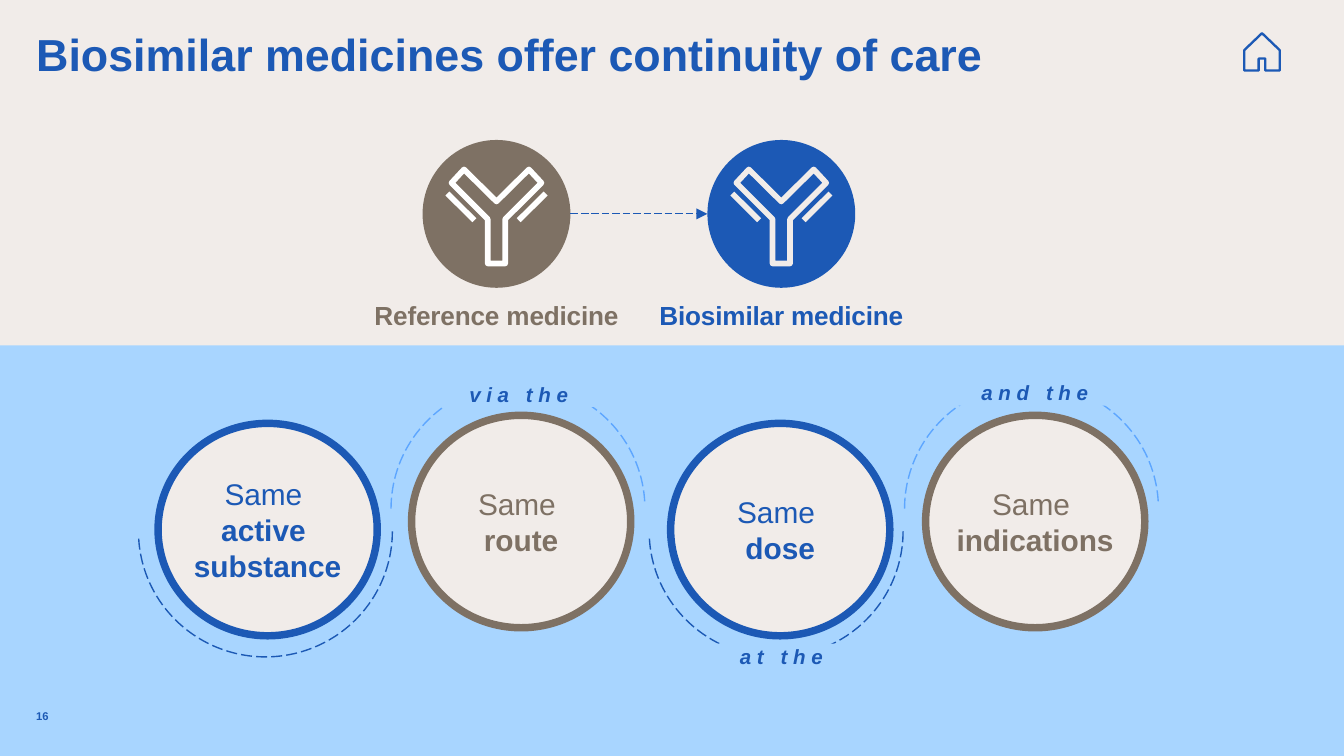
from pptx import Presentation
from pptx.dml.color import RGBColor
from pptx.enum.dml import MSO_LINE
from pptx.enum.shapes import MSO_CONNECTOR, MSO_SHAPE
from pptx.enum.text import MSO_ANCHOR, PP_ALIGN
from pptx.oxml.ns import qn
from pptx.util import Pt
from lxml.etree import SubElement

BLUE = RGBColor(0x1C, 0x59, 0xB5)
BROWN = RGBColor(0x7E, 0x71, 0x64)
SKY = RGBColor(0xA8, 0xD5, 0xFF)
LIGHT = RGBColor(0x5D, 0xA6, 0xFF)
CREAM = RGBColor(0xF1, 0xEC, 0xE9)
WHITE = RGBColor(0xFF, 0xFF, 0xFF)


def style(shape, fill=None, line=None, width=1):
    shape.shadow.inherit = False
    if fill is None:
        shape.fill.background()
    else:
        shape.fill.solid()
        shape.fill.fore_color.rgb = fill
    if line is None:
        shape.line.fill.background()
    else:
        shape.line.color.rgb = line
        shape.line.width = Pt(width)
    return shape


def add_form(slide, kind, box, fill=None, line=None, width=1):
    shape = slide.shapes.add_shape(kind, *map(Pt, box))
    return style(shape, fill, line, width)


def add_run(para, text, size, color, bold=True, italic=False, space=0):
    run = para.add_run()
    run.text = text
    font = run.font
    font.name, font.size = "Arial", Pt(size)
    font.bold, font.italic = bold, italic
    font.color.rgb = color
    if space:
        run._r.get_or_add_rPr().set("spc", str(space))


def set_frame(shape, align, anchor=MSO_ANCHOR.TOP, wrap=True, side=0):
    frame = shape.text_frame
    frame.word_wrap = wrap
    frame.vertical_anchor = anchor
    frame.margin_left = frame.margin_right = Pt(side)
    frame.margin_top = frame.margin_bottom = 0
    para = frame.paragraphs[0]
    para.alignment = align
    return para


def add_text(slide, box, text, size, color, align=PP_ALIGN.LEFT, space=0):
    shape = slide.shapes.add_textbox(*map(Pt, box))
    add_run(set_frame(shape, align), text, size, color, space=space)


def add_title(slide, text):
    title = slide.shapes.title
    title.left, title.top, title.width, title.height = map(Pt, (19.4, 14.4, 626.4, 89.3))
    add_run(set_frame(title, PP_ALIGN.LEFT), text, 24, BLUE)


def add_line(slide, start, end, color, width):
    line = slide.shapes.add_connector(MSO_CONNECTOR.STRAIGHT, *map(Pt, start + end))
    line.line.color.rgb = color
    line.line.width = Pt(width)
    SubElement(line._element.spPr, qn("a:effectLst"))
    return line


def add_arrow(slide, start, end):
    arrow = add_line(slide, start, end, BLUE, 0.5)
    arrow.line.dash_style = MSO_LINE.LONG_DASH
    SubElement(arrow.line._get_or_add_ln(), qn("a:tailEnd"), type="triangle")


def add_outline(slide, half, mid, color, width):
    points = half + [(2 * mid - x, y) for x, y in reversed(half)]
    spots = [(Pt(x), Pt(y)) for x, y in points]
    form = slide.shapes.build_freeform(*spots[0])
    form.add_line_segments(spots[1:], close=True)
    style(form.convert_to_shape(), None, color, width)


def add_drug(slide, mid, name, fill, ink):
    add_form(slide, MSO_SHAPE.OVAL, (mid - 39.6, 75, 79.2, 79.2), fill)
    half = [(0, 108), (17.4, 90.8), (24.1, 98), (4.7, 117.4), (4.7, 141.2)]
    add_outline(slide, [(mid + x, y) for x, y in half], mid, ink, 3)
    for sign in (-1, 1):
        add_line(slide, (mid + sign * 26.3, 103.7), (mid + sign * 11.9, 118), ink, 3)
    add_text(slide, (mid - 68, 160.6, 136, 22.3), name, 14, fill, PP_ALIGN.CENTER, -10)


def add_arc(slide, left, top, turn, color):
    arc = add_form(slide, MSO_SHAPE.ARC, (left, top, 134.6, 136), None, color, 0.75)
    arc.adjustments[1] = 53.04
    arc.rotation = turn
    arc.line.dash_style = MSO_LINE.LONG_DASH


def add_link(slide, left, top, width, text):
    box = add_form(slide, MSO_SHAPE.RECTANGLE, (left, top, width, 13.5), SKY)
    para = set_frame(box, PP_ALIGN.CENTER, side=7.2)
    add_run(para, text, 11, BLUE, italic=True, space=300)


def add_ring(slide, left, top, color, lines):
    ring = add_form(slide, MSO_SHAPE.OVAL, (left, top, 117.4, 113.8), CREAM, color, 4)
    para = set_frame(ring, PP_ALIGN.CENTER, MSO_ANCHOR.MIDDLE, False)
    add_run(para, "Same ", 16, color, False)
    for line in lines:
        para.add_line_break()
        add_run(para, line, 16, color)


def main():
    deck = Presentation()
    deck.slide_width, deck.slide_height = Pt(720), Pt(405)
    slide = deck.slides.add_slide(deck.slide_layouts[5])
    slide.background.fill.solid()
    slide.background.fill.fore_color.rgb = CREAM

    add_form(slide, MSO_SHAPE.RECTANGLE, (0, 185, 720, 220), SKY)
    add_title(slide, "Biosimilar medicines offer continuity of care")
    house = [(676.1, 17.8), (685.6, 26.9), (685.6, 37.8), (677.9, 37.8), (677.9, 31.4)]
    add_outline(slide, house, 676.1, BLUE, 1.25)

    add_drug(slide, 266, "Reference medicine", BROWN, WHITE)
    add_drug(slide, 418.6, "Biosimilar medicine", BLUE, CREAM)
    add_arrow(slide, (305.6, 114.6), (379, 114.6))

    for left, top in ((74.9, 216.7), (348.5, 216.7)):
        add_arc(slide, left, top, 90, BLUE)
    for left, top in ((210.2, 204.5), (485.3, 204.5)):
        add_arc(slide, left, top, 270, LIGHT)
    for link in (
        (230.4, 204.5, 95, "via the"),
        (375.8, 344.9, 85.7, "at the"),
        (506.9, 203.8, 95, "and the"),
    ):
        add_link(slide, *link)
    for ring in (
        (84.7, 226.8, BLUE, ["active ", "substance"]),
        (220.5, 222.5, BROWN, ["route"]),
        (359.3, 226.8, BLUE, ["dose"]),
        (495.9, 222.5, BROWN, ["indications"]),
    ):
        add_ring(slide, *ring)

    add_text(slide, (19.4, 380.2, 11.5, 10.8), "16", 6, BLUE)
    deck.save("out.pptx")


if __name__ == "__main__":
    main()
